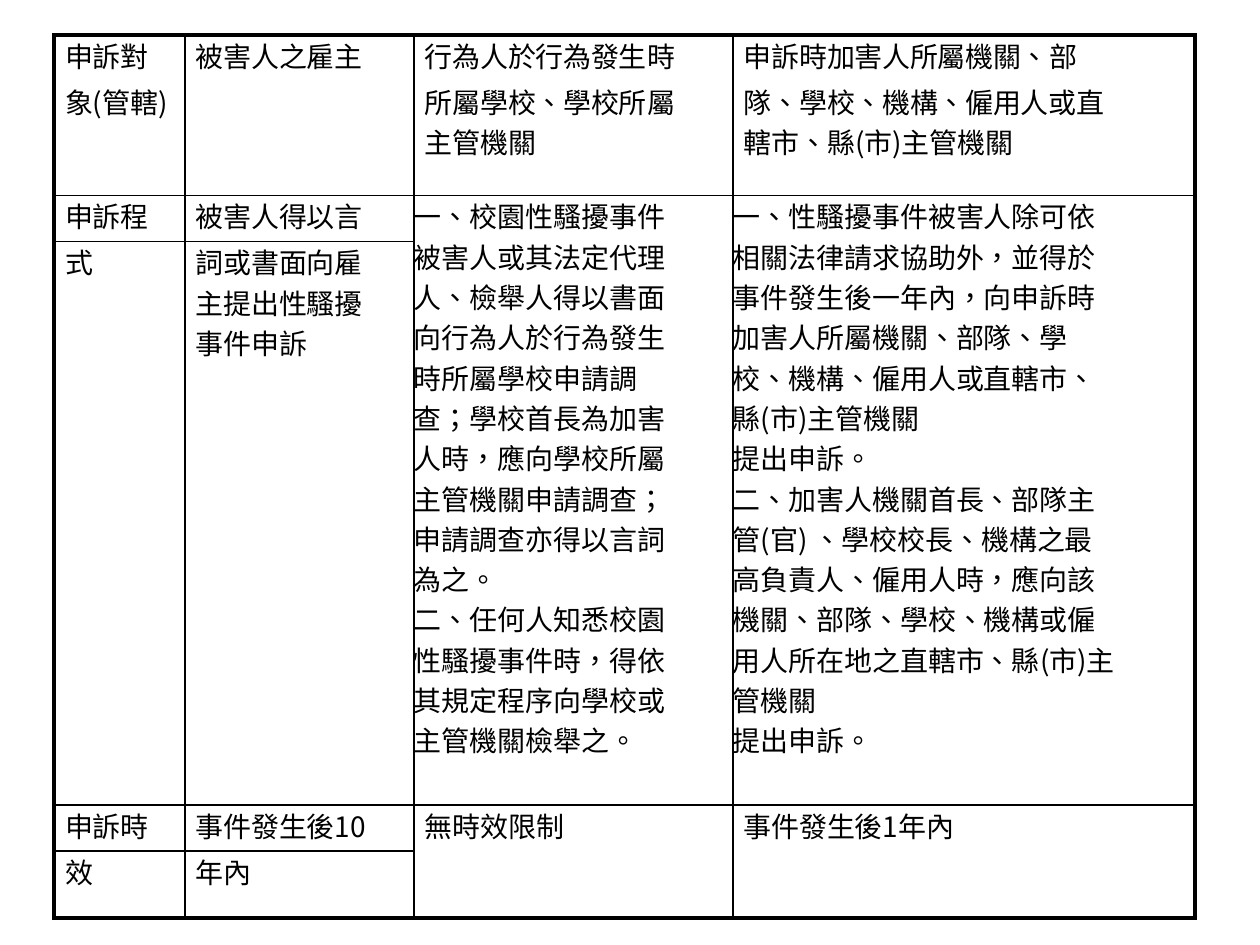
from itertools import groupby

from lxml import etree
from pptx import Presentation
from pptx import util as u
from pptx.dml.color import RGBColor
from pptx.oxml import ns

PX = 914400 // 126
BLACK = RGBColor(0, 0, 0)
FONT = "Noto Sans CJK SC"
INDENT = 11
THICK, THIN = 2.25, 1
NO_STYLE = "{2D5ABB26-0587-4C30-8999-92F81FD0307C}"
TABLE_BOX = (54, 35, 1141, 882)
COLUMNS = [131, 229, 319, 462]
ROWS = [46, 38, 74, 46, 38, 38, 483, 46, 67]
SECTION_STARTS = (0, 3, 7)
SPLIT_ROWS = (4, 8)

SPANS = {(0, 1): 3, (1, 0): 2, (3, 2): 4, (3, 3): 4, (4, 0): 3, (7, 2): 2, (7, 3): 2}
LABELS = {
    (0, 0): "申訴對",
    (0, 1): "被害人之雇主",
    (0, 2): "行為人於行為發生時",
    (0, 3): "申訴時加害人所屬機關、部",
    (1, 0): "象(管轄)",
    (1, 2): "所屬學校、學校所屬",
    (1, 3): "隊、學校、機構、僱用人或直",
    (2, 2): "主管機關",
    (2, 3): "轄市、縣(市)主管機關",
    (3, 0): "申訴程",
    (3, 1): "被害人得以言",
    (4, 0): "式",
    (4, 1): "詞或書面向雇",
    (5, 1): "主提出性騷擾",
    (6, 1): "事件申訴",
    (7, 0): "申訴時",
    (7, 1): "事件發生後10",
    (7, 2): "無時效限制",
    (7, 3): "事件發生後1年內",
    (8, 0): "效",
    (8, 1): "年內",
}
PROCEDURES = {
    (3, 2): [
        "一、校園性騷擾事件",
        "被害人或其法定代理",
        "人、檢舉人得以書面",
        "向行為人於行為發生",
        "時所屬學校申請調",
        "查；學校首長為加害",
        "人時，應向學校所屬",
        "主管機關申請調查；",
        "申請調查亦得以言詞",
        "為之。",
        "二、任何人知悉校園",
        "性騷擾事件時，得依",
        "其規定程序向學校或",
        "主管機關檢舉之。",
    ],
    (3, 3): [
        "一、性騷擾事件被害人除可依",
        "相關法律請求協助外，並得於",
        "事件發生後一年內，向申訴時",
        "加害人所屬機關、部隊、學",
        "校、機構、僱用人或直轄市、",
        "縣(市)主管機關",
        "提出申訴。",
        "二、加害人機關首長、部隊主",
        "管(官) 、學校校長、機構之最",
        "高負責人、僱用人時，應向該",
        "機關、部隊、學校、機構或僱",
        "用人所在地之直轄市、縣(市)主",
        "管機關",
        "提出申訴。",
    ],
}


def add_run(paragraph, wording, spacing=0):
    """Append a run in the table's font with the given letter spacing."""
    run = paragraph.add_run()
    run.text = wording
    for name, value in {"name": FONT, "size": u.Pt(16)}.items():
        setattr(run.font, name, value)
    run.font.color.rgb = BLACK
    properties = run.font._element
    properties.set("lang", "zh-TW")
    properties.set("spc", str(spacing))
    east_asian = etree.Element(ns.qn("a:ea"), typeface=FONT)
    properties.find(ns.qn("a:latin")).addnext(east_asian)


def write_label(cell, wording):
    """Write an indented line, tightened except for brackets and its last character."""
    paragraph = cell.text_frame.paragraphs[0]
    paragraph._p.get_or_add_pPr().set("marL", str(INDENT * PX))
    last = len(wording) - 1
    marked = [(character, index < last and character not in "()")
              for index, character in enumerate(wording)]
    for tight, group in groupby(marked, key=lambda pair: pair[1]):
        add_run(paragraph, "".join(pair[0] for pair in group), -10 if tight else 0)


def write_procedure(cell, lines):
    """Write one paragraph for each line of a procedure."""
    frame = cell.text_frame
    for index, line in enumerate(lines):
        paragraph = frame.add_paragraph() if index else frame.paragraphs[0]
        add_run(paragraph, line)


def rule_above(row, column):
    """Return the weight of the rule along the top of a grid position."""
    if row in (0, len(ROWS)):
        return THICK
    if row in SECTION_STARTS or (row in SPLIT_ROWS and column < 2):
        return THIN
    return 0


def draw_borders(cell, row, column):
    """Rule the four sides of a cell."""
    last_row = row + SPANS.get((row, column), 1)
    weights = {
        "lnL": THIN if column else THICK,
        "lnR": THIN if column < len(COLUMNS) - 1 else THICK,
        "lnT": rule_above(row, column),
        "lnB": rule_above(last_row, column),
    }
    properties = cell._tc.get_or_add_tcPr()
    for position, (side, weight) in enumerate(weights.items()):
        line = etree.Element(ns.qn("a:" + side), w=str(u.Pt(weight)))
        if weight:
            fill = etree.SubElement(line, ns.qn("a:solidFill"))
            etree.SubElement(fill, ns.qn("a:srgbClr"), val=str(BLACK))
        else:
            etree.SubElement(line, ns.qn("a:noFill"))
        properties.insert(position, line)


def add_complaint_table(slide, box):
    """Place the table of complaint rules in the given box."""
    frame = slide.shapes.add_table(len(ROWS), len(COLUMNS), *(side * PX for side in box))
    table = frame.table
    table._tbl.tblPr.find(ns.qn("a:tableStyleId")).text = NO_STYLE
    for name in ("first_row", "horz_banding"):
        setattr(table, name, False)
    for column, width in zip(table.columns, COLUMNS):
        column.width = width * PX
    for row, height in zip(table.rows, ROWS):
        row.height = height * PX
    for (row, column), span in SPANS.items():
        table.cell(row, column).merge(table.cell(row + span - 1, column))
    for row in range(len(ROWS)):
        for column in range(len(COLUMNS)):
            cell = table.cell(row, column)
            for side in ("left", "right", "top", "bottom"):
                setattr(cell, "margin_" + side, 0)
            cell.fill.background()
            draw_borders(cell, row, column)
    for place, wording in LABELS.items():
        write_label(table.cell(*place), wording)
    for place, lines in PROCEDURES.items():
        write_procedure(table.cell(*place), lines)


def main():
    """Build and save the slide."""
    presentation = Presentation()
    presentation.slide_width = 1260 * PX
    presentation.slide_height = 945 * PX
    slide = presentation.slides.add_slide(presentation.slide_layouts[6])
    add_complaint_table(slide, TABLE_BOX)
    presentation.save("out.pptx")


if __name__ == "__main__":
    main()
